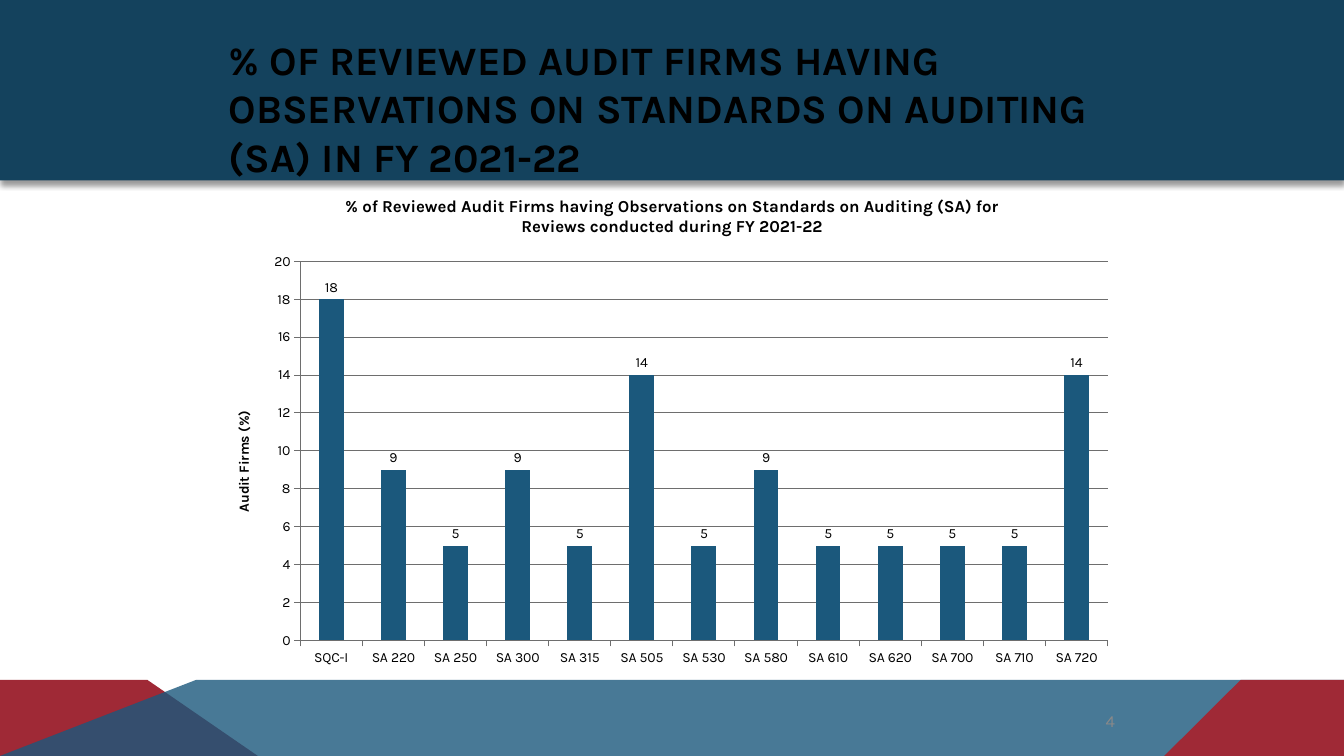
import dataclasses

import pptx
import pptx.chart.data
import pptx.dml.color
import pptx.enum.chart
import pptx.enum.shapes
import pptx.enum.text
import pptx.oxml
import pptx.oxml.ns
import pptx.util
from pptx.util import Cm, Pt


@dataclasses.dataclass(frozen=True)
class Theme:
    font: str = "Karla"
    ink: str = "000000"
    navy: str = "14425D"
    blue: str = "1B587C"
    red: str = "9F2936"
    gray: str = "898989"
    rule: str = "6E6E6E"
    head: float = 28.8
    title: float = 12
    small: float = 10


THEME = Theme()
WIDE, HIGH = 33.87, 19.05
FOOT = 17.13
FIRMS = {
    "SQC-I": 18, "SA 220": 9, "SA 250": 5, "SA 300": 9, "SA 315": 5,
    "SA 505": 14, "SA 530": 5, "SA 580": 9, "SA 610": 5, "SA 620": 5,
    "SA 700": 5, "SA 710": 5, "SA 720": 14,
}


def tint(code):
    return pptx.dml.color.RGBColor.from_string(code)


def style(font, size, color=THEME.ink, bold=False):
    font.name = THEME.font
    font.size = Pt(size)
    font.bold = bold
    font.color.rgb = tint(color)


def paint(shape, color):
    shape.shadow.inherit = False
    shape.fill.solid()
    shape.fill.fore_color.rgb = tint(color)
    shape.line.fill.background()


def node(tag, body="", **attrs):
    """Build one XML element with its attributes and inner markup."""
    space = pptx.oxml.ns.nsdecls("a", "c")
    pairs = " ".join(f'{key}="{val}"' for key, val in attrs.items())
    return pptx.oxml.parse_xml(f"<{tag} {space} {pairs}>{body}</{tag}>")


def add_wedge(slide, color, points, alpha=None):
    """Draw a filled polygon; alpha is its opacity in percent."""
    spots = [(Cm(x), Cm(y)) for x, y in points]
    pen = slide.shapes.build_freeform(*spots[0])
    pen.add_line_segments(spots[1:], close=True)
    wedge = pen.convert_to_shape()
    paint(wedge, color)
    if alpha:
        fill = wedge.element.xpath("./p:spPr/a:solidFill/a:srgbClr")[0]
        fill.append(node("a:alpha", val=alpha * 1000))


def add_band(slide):
    kind = pptx.enum.shapes.MSO_SHAPE.RECTANGLE
    band = slide.shapes.add_shape(kind, 0, 0, Cm(WIDE), Cm(4.55))
    paint(band, THEME.navy)
    shade = node(
        "a:outerShdw",
        '<a:srgbClr val="000000"><a:alpha val="40000"/></a:srgbClr>',
        blurRad=Pt(4), dist=Pt(3), dir=90 * 60000, rotWithShape=0,
    )
    band.element.xpath("./p:spPr/a:effectLst")[0].append(shade)


def add_text(slide, text, box, size, color=THEME.ink, bold=False,
             align="LEFT", anchor="TOP"):
    frame = slide.shapes.add_textbox(*map(Cm, box)).text_frame
    frame.word_wrap = True
    frame.vertical_anchor = pptx.enum.text.MSO_ANCHOR[anchor]
    para = frame.paragraphs[0]
    para.alignment = pptx.enum.text.PP_ALIGN[align]
    run = para.add_run()
    run.text = text
    style(run.font, size, color, bold)


def set_label(title, text, size):
    run = title.text_frame.paragraphs[0].add_run()
    run.text = text
    style(run.font, size, bold=True)


def set_axes(chart):
    for axis in (chart.category_axis, chart.value_axis):
        axis.major_tick_mark = pptx.enum.chart.XL_TICK_MARK.OUTSIDE
        axis.minor_tick_mark = pptx.enum.chart.XL_TICK_MARK.NONE
        axis.format.line.color.rgb = tint(THEME.rule)
        axis.format.line.width = Pt(0.75)
        style(axis.tick_labels.font, THEME.small)
    scale = chart.value_axis
    scale.minimum_scale, scale.maximum_scale, scale.major_unit = 0, 20, 2
    scale.tick_labels.number_format = "0"
    scale.tick_labels.number_format_is_linked = False
    scale.has_major_gridlines = True
    scale.major_gridlines.format.line.color.rgb = tint(THEME.rule)
    scale.major_gridlines.format.line.width = Pt(0.75)
    set_label(scale.axis_title, "Audit Firms (%) ", THEME.small)
    body = chart.element.xpath(".//c:valAx/c:title//a:bodyPr")[0]
    body.set("rot", "-5400000")
    body.set("vert", "horz")


def set_plot(chart, **area):
    """Fix the inner plot area as fractions of the chart."""
    marks = '<c:layoutTarget val="inner"/>'
    marks += '<c:xMode val="edge"/><c:yMode val="edge"/>'
    marks += "".join(f'<c:{key} val="{val}"/>' for key, val in area.items())
    plot = chart.element.xpath(".//c:plotArea")[0]
    for old in plot.xpath("./c:layout"):
        plot.remove(old)
    plot.insert(0, node("c:layout", f"<c:manualLayout>{marks}</c:manualLayout>"))


def add_bars(slide):
    data = pptx.chart.data.CategoryChartData(number_format="0")
    data.categories = list(FIRMS)
    data.add_series("Series 1", list(FIRMS.values()))
    kind = pptx.enum.chart.XL_CHART_TYPE.COLUMN_CLUSTERED
    box = map(Cm, (5.51, 4.45, 22.86, 12.57))
    chart = slide.shapes.add_chart(kind, *box, data).chart
    style(chart.font, THEME.small)
    chart.has_legend = False
    chart.has_title = True
    set_label(
        chart.chart_title,
        "% of Reviewed Audit Firms having Observations on Standards on "
        "Auditing (SA) for Reviews conducted during FY 2021-22",
        THEME.title,
    )
    set_axes(chart)
    set_plot(chart, x=0.09, y=0.17, w=0.89, h=0.76)

    plot = chart.plots[0]
    plot.vary_by_categories = False
    plot.gap_width = 150
    bars = plot.series[0].format
    bars.fill.solid()
    bars.fill.fore_color.rgb = tint(THEME.blue)
    plot.has_data_labels = True
    tags = plot.data_labels
    tags.show_value = True
    tags.number_format = "0"
    tags.number_format_is_linked = False
    tags.position = pptx.enum.chart.XL_LABEL_POSITION.OUTSIDE_END
    style(tags.font, THEME.small)


def main():
    deck = pptx.Presentation()
    deck.slide_width, deck.slide_height = Cm(WIDE), Cm(HIGH)
    slide = deck.slides.add_slide(deck.slide_layouts[6])

    add_wedge(slide, THEME.red,
              [(0, HIGH), (0, FOOT), (3.71, FOOT), (6.5, HIGH)])
    add_wedge(slide, THEME.blue,
              [(0, HIGH), (4.95, FOOT), (WIDE, FOOT), (WIDE, HIGH)], alpha=80)
    add_wedge(slide, THEME.red,
              [(WIDE, HIGH), (WIDE, FOOT), (31.27, FOOT), (29.34, HIGH)])
    add_band(slide)
    add_text(
        slide,
        "% OF REVIEWED AUDIT FIRMS HAVING OBSERVATIONS ON STANDARDS ON "
        "AUDITING (SA) IN FY 2021-22",
        (5.51, 0.76, 22.86, 2.41), THEME.head, bold=True,
    )
    add_bars(slide)
    add_text(slide, "4", (25.4, 17.65, 2.95, 1.02), THEME.title,
             THEME.gray, align="RIGHT", anchor="MIDDLE")
    deck.save("out.pptx")


if __name__ == "__main__":
    main()
